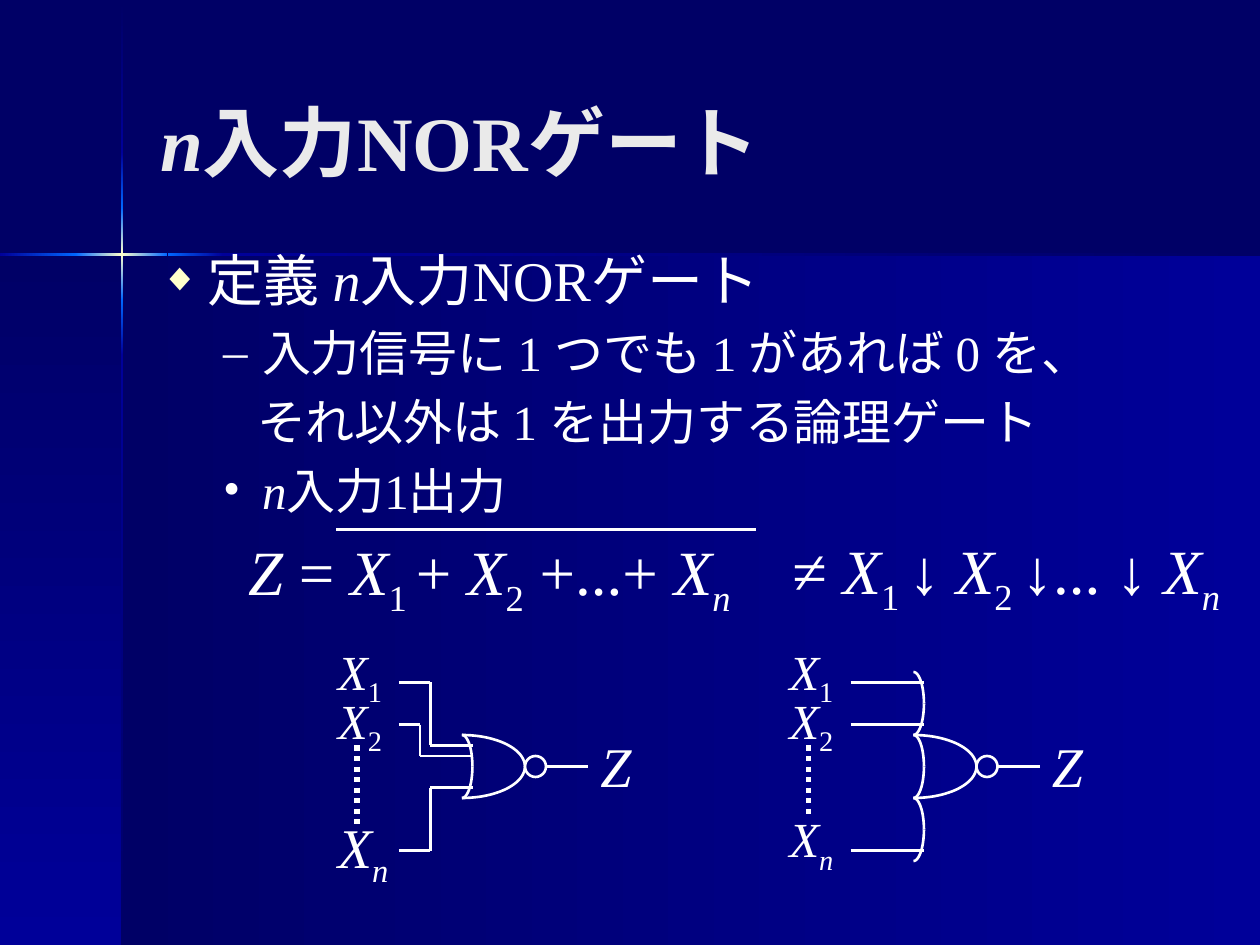
from copy import deepcopy
from dataclasses import dataclass
from math import cos, pi, sin

from pptx import Presentation
from pptx import util as u
from pptx.dml.color import RGBColor
from pptx.enum import dml, lang, shapes, text
from pptx.oxml import parse_xml
from pptx.oxml.ns import nsdecls, qn

HUES = {
    "night": "000066",
    "navy": "000099",
    "blue": "0066FF",
    "glow": "FFFFCC",
    "pale": "EAEAEA",
    "white": "FFFFFF",
}
FONT = "Times New Roman"
STEP = 1 / 12
MID = 73 * STEP


@dataclass
class Band:
    box: tuple[float, float, float, float]
    hues: tuple[str, ...]
    down: bool = True


@dataclass
class Item:
    runs: list[tuple[str, str]]
    size: int
    mark: str = ""
    left: float = 0.81
    hang: float = -0.31
    level: int = 1


@dataclass
class Gate:
    x: float
    rows: tuple[float, ...]
    last: tuple[float, float, float, int]
    dots: float
    paths: list[list[tuple[float, float]]]
    bows: tuple[int, ...]


BANDS = [
    Band((0.97, 2.02, 9.03, 5.48), ("night", "navy"), False),
    Band((0, 2.02, 0.97, 5.48), ("night", "navy")),
    Band((0.96, 0.01, 0.02, 1.21), ("night", "navy")),
    Band((0.96, 2.82, 0.02, 4.68), ("navy", "night")),
    Band((1.77, 2.01, 8.23, 0.02), ("navy", "night"), False),
    Band((0.96, 2.38, 0.02, 0.44), ("blue", "navy")),
    Band((0.96, 1.21, 0.02, 0.44), ("navy", "blue")),
    Band((0.96, 1.65, 0.02, 0.73), ("blue", "glow", "blue")),
    Band((0, 2.01, 0.61, 0.02), ("navy", "blue"), False),
    Band((1.33, 2.01, 0.44, 0.02), ("blue", "navy"), False),
    Band((0.6, 2.01, 0.73, 0.02), ("blue", "glow", "blue"), False),
]
ITEMS = [
    Item([("定義 ", ""), ("n", "i"), ("入力NORゲート", "")], 32, "◆", 0.38, -0.38, 0),
    Item([("入力信号に 1 つでも 1 があれば 0 を、", "")], 28, "–"),
    Item([("それ以外は 1 を出力する論理ゲート", "")], 28, hang=-0.04),
    Item([("n", "i"), ("入力1出力", "")], 28, "•"),
]
SUM = [("Z", "i"), (" = ", ""), ("X", "i"), ("1 ", "s"), ("+ ", ""), ("X", "i"),
       ("2", "s"), (" +...+ ", ""), ("X", "i"), ("n", "is")]
ARROW = [("≠ ", ""), ("X", "i"), ("1 ", "s"), ("↓ ", ""), ("X", "i"),
         ("2 ", "s"), ("↓... ↓ ", ""), ("X", "i"), ("n", "is")]
GATES = [
    Gate(44 * STEP, (5.04, 5.43), (6.4, 0.62, 0.63, 32), 79 * STEP,
         [[(-6, -8), (-3, -8), (-3, -2), (1, -2)],
          [(-6, -4), (-4, -4), (-4, -1), (1, -1)],
          [(-6, 8), (-3, 8), (-3, 2), (1, 2)]], (0,)),
    Gate(87 * STEP, (5.04, 5.43), (6.37, 0.57, 0.57, 28), 78 * STEP,
         [[(-6, y), (1, y)] for y in (-8, -4, 8)], (0, 6, -6)),
]


def tint(name: str) -> RGBColor:
    return RGBColor.from_string(HUES[name])


def put(obj, vals: dict) -> None:
    for key, val in vals.items():
        setattr(obj, key, val)


def write(para, runs: list[tuple[str, str]], size: int,
          hue: str = "white", bold: bool = False) -> None:
    for words, style in runs:
        run = para.add_run()
        run.text = words
        put(run.font, {"name": FONT, "size": u.Pt(size), "bold": bold,
                       "italic": "i" in style,
                       "language_id": lang.MSO_LANGUAGE_ID.JAPANESE})
        run.font.color.rgb = tint(hue)
        if "s" in style:
            run.font._element.set("baseline", "-25000")


def label(host, box: tuple[float, ...], runs: list[tuple[str, str]], size: int) -> None:
    frame = host.add_textbox(*map(u.Inches, box)).text_frame
    put(frame, {"word_wrap": False, "auto_size": text.MSO_AUTO_SIZE.SHAPE_TO_FIT_TEXT})
    write(frame.paragraphs[0], runs, size)


def ink(line, width: float = 1.5) -> None:
    line.color.rgb = tint("white")
    line.width = u.Pt(width)


def wire(host, start: tuple[float, float], end: tuple[float, float],
         width: float = 1.5, dash=None) -> None:
    link = host.add_connector(shapes.MSO_CONNECTOR.STRAIGHT,
                              *map(u.Inches, (*start, *end)))
    ink(link.line, width)
    if dash:
        link.line.dash_style = dash
    link._element.spPr.append(parse_xml(f"<a:effectLst {nsdecls('a')}/>"))


def hollow(shape) -> None:
    shape.shadow.inherit = False
    shape.fill.background()
    ink(shape.line)


def bow(host, x: float, mid: float, width: float) -> None:
    for side in (-1, 1):
        turns = [i * pi / 48 for i in range(25)]
        dots = [(u.Inches(x + width * sin(t)),
                 u.Inches(mid + side * 3 * STEP * cos(t))) for t in turns]
        pen = host.build_freeform(*dots[0])
        pen.add_line_segments(dots[1:], close=False)
        hollow(pen.convert_to_shape())


def band(host, spec: Band) -> None:
    shape = host.add_shape(shapes.MSO_SHAPE.RECTANGLE, *map(u.Inches, spec.box))
    shape.shadow.inherit = False
    shape.line.fill.background()
    shape.fill.gradient()
    shape.fill.gradient_angle = 270 if spec.down else 0
    if len(spec.hues) == 3:
        stops = shape._element.spPr.find(qn("a:gradFill")).find(qn("a:gsLst"))
        stops.append(deepcopy(stops[-1]))
    for i, (stop, hue) in enumerate(zip(shape.fill.gradient_stops, spec.hues)):
        stop.color.rgb = tint(hue)
        stop.position = i / (len(spec.hues) - 1)


def bullet(para, item: Item) -> None:
    props = para._p.get_or_add_pPr()
    props.set("marL", str(u.Inches(item.left)))
    props.set("indent", str(u.Inches(item.hang)))
    parts = ["<a:buNone {}/>"]
    if item.mark:
        hue = HUES["white" if item.level else "glow"]
        scale = 100 if item.level else 70
        parts = [f'<a:buClr {{}}><a:srgbClr val="{hue}"/></a:buClr>',
                 f'<a:buSzPct {{}} val="{scale * 1000}"/>',
                 f'<a:buFont {{}} typeface="{FONT}"/>',
                 f'<a:buChar {{}} char="{item.mark}"/>']
    for part in parts:
        props.append(parse_xml(part.format(nsdecls("a"))))


def draw(host, gate: Gate) -> None:
    x = gate.x
    for i, top in enumerate(gate.rows, 1):
        label(host, (x - 13 * STEP, top, 0.57, 0.57), [("X", "i"), (str(i), "s")], 28)
    top, wide, high, size = gate.last
    label(host, (x - 13 * STEP, top, wide, high), [("X", "i"), ("n", "is")], size)
    label(host, (x + 1, 5.76, 0.45, 0.63), [("Z", "i")], 32)
    for path in gate.paths:
        spots = [(x + a * STEP, MID + b * STEP) for a, b in path]
        for start, end in zip(spots, spots[1:]):
            wire(host, start, end)
    wire(host, (x - 10 * STEP, MID - 2 * STEP), (x - 10 * STEP, gate.dots), 3,
         dml.MSO_LINE.ROUND_DOT)
    bow(host, x, MID, 6 * STEP)
    for shift in gate.bows:
        bow(host, x, MID + shift * STEP, STEP)
    hollow(host.add_shape(shapes.MSO_SHAPE.OVAL, *map(
        u.Inches, (x + 6 * STEP, MID - STEP, 2 * STEP, 2 * STEP))))
    wire(host, (x + 8 * STEP, MID), (x + 1, MID))


def main() -> None:
    deck = Presentation()
    put(deck, {"slide_width": u.Inches(10), "slide_height": u.Inches(7.5)})
    slide = deck.slides.add_slide(deck.slide_layouts[1])
    slide.background.fill.solid()
    slide.background.fill.fore_color.rgb = tint("night")
    host = slide.shapes
    title, body = host.title, slide.placeholders[1]
    for spec in BANDS:
        band(host, spec)
    for hold, top, high, anchor in ((title, 0.33, 1.57, text.MSO_ANCHOR.MIDDLE),
                                    (body, 1.9, 3.35, text.MSO_ANCHOR.TOP)):
        put(hold, {"left": u.Inches(1.17), "top": u.Inches(top),
                   "width": u.Inches(8.25), "height": u.Inches(high)})
        put(hold.text_frame, {"vertical_anchor": anchor, "word_wrap": True,
                              "auto_size": text.MSO_AUTO_SIZE.NONE})
        host._spTree.append(hold._element)
    head = title.text_frame.paragraphs[0]
    head.alignment = text.PP_ALIGN.LEFT
    write(head, [("n", "i"), ("入力NORゲート", "")], 44, "pale", True)
    frame = body.text_frame
    for i, item in enumerate(ITEMS):
        para = frame.add_paragraph() if i else frame.paragraphs[0]
        para.level = item.level
        bullet(para, item)
        write(para, item.runs, item.size)
    for gate in GATES:
        draw(host.add_group_shape().shapes, gate)
    label(host, (1.87, 4.18, 4.18, 0.71), SUM, 36)
    wire(host, (2.67, 4.2), (6, 4.2))
    label(host, (6.19, 4.17, 3.8, 0.71), ARROW, 36)
    deck.save("out.pptx")


if __name__ == "__main__":
    main()
